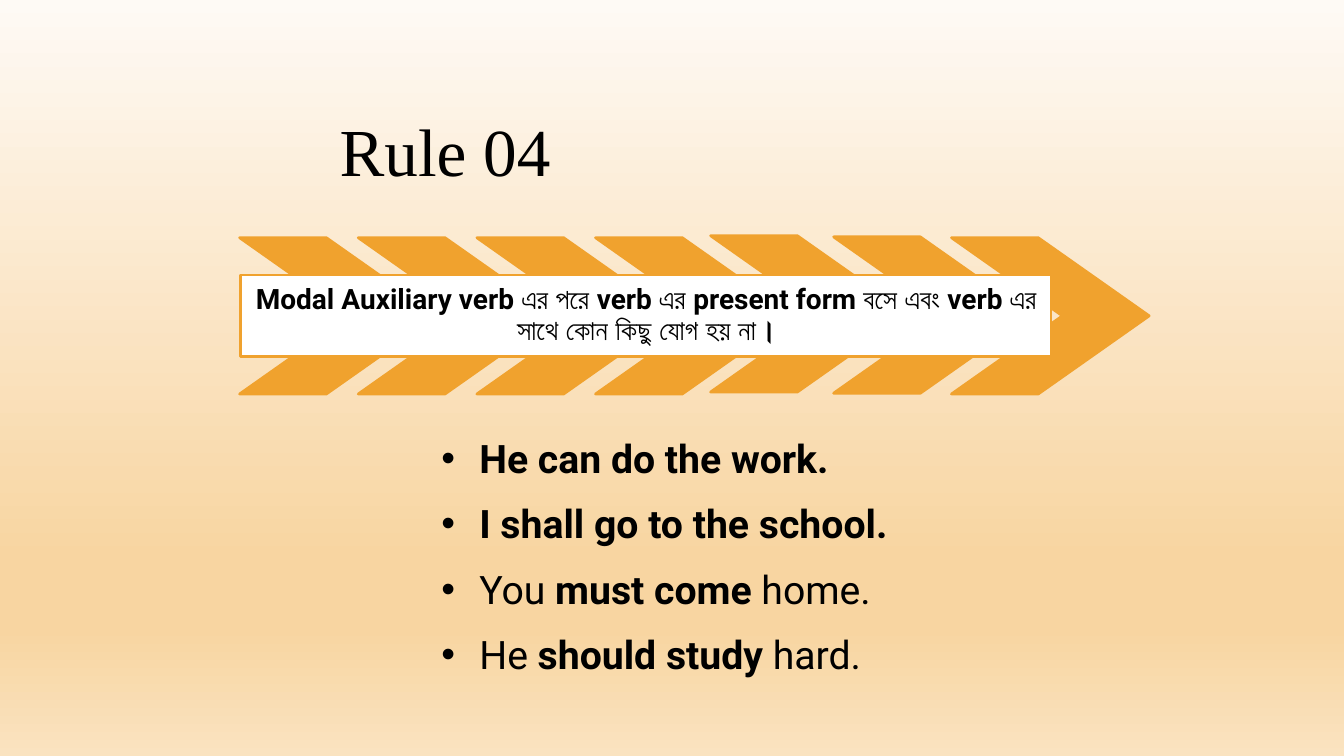
from dataclasses import dataclass

from lxml.etree import SubElement
from pptx import Presentation
from pptx.dml.color import RGBColor
from pptx.enum.shapes import MSO_SHAPE as Preset
from pptx.enum.text import MSO_ANCHOR as Anchor, MSO_AUTO_SIZE as AutoSize, PP_ALIGN as Align
from pptx.oxml.ns import qn
from pptx.shapes.autoshape import Shape
from pptx.slide import Slide
from pptx.text.text import TextFrame, _Paragraph as Paragraph
from pptx.util import Cm, Pt


@dataclass(frozen=True)
class Theme:
    accent: str = "F0A22E"
    paper: str = "FFFFFF"
    ink: str = "000000"
    sky: tuple[tuple[int, str], ...] = (
        (0, "FEFAF5"), (74, "F8D5A1"), (83, "F8D5A1"), (100, "FAE3C0"))
    title_font: str = "Times New Roman"
    body_font: str = "Roboto"
    title_size: int = 48
    rule_size: int = 20
    example_size: int = 28
    outline: int = 2


@dataclass(frozen=True)
class Area:
    """A rectangle on the page, in centimetres."""
    left: float
    top: float
    width: float
    height: float


@dataclass(frozen=True)
class Span:
    text: str
    bold: bool = False


THEME = Theme()
TITLE_AREA = Area(8.05, 3.4, 21.23, 1.93)
RULE_AREA = Area(6.07, 6.93, 20.42, 2.06)
EXAMPLE_AREA = Area(10.87, 10.64, 14.58, 8.41)

CHEVRON_COUNT = 7
CHEVRON_STEP = 2.99
FIRST_CHEVRON = Area(6.04, 5.99, 4.98, 3.94)
CHEVRON_NUDGES = {4: (-0.09, -0.05), 5: (0.02, -0.02)}

RULE = "Modal Auxiliary verb এর পরে verb এর present form বসে এবং verb এর সাথে কোন কিছু যোগ হয় না।"
EXAMPLES = (
    (Span("He can do the work.", True),),
    (Span("I shall go to the school.", True),),
    (Span("You "), Span("must come ", True), Span("home.")),
    (Span("He "), Span("should study ", True), Span("hard.")),
)


def paint_background(page: Slide) -> None:
    """Fill the page with the theme's gradient, running from top to bottom."""
    fill = page.background.fill
    fill.gradient()
    gradient = page.background._cSld.find(".//" + qn("a:gradFill"))
    stops = gradient.find(qn("a:gsLst"))
    for stop in list(stops):
        stops.remove(stop)
    for percent, color in THEME.sky:
        stop = SubElement(stops, qn("a:gs"), pos=str(percent * 1000))
        SubElement(stop, qn("a:srgbClr"), val=color)
    fill.gradient_angle = 270


def place(shape: Shape, area: Area) -> None:
    shape.left, shape.top = Cm(area.left), Cm(area.top)
    shape.width, shape.height = Cm(area.width), Cm(area.height)


def set_frame(frame: TextFrame, *, anchor: Anchor, inset: tuple[float, float],
              auto_size: AutoSize = AutoSize.NONE) -> None:
    """Set wrapping, anchor and the (horizontal, vertical) insets in centimetres."""
    frame.word_wrap = True
    frame.auto_size = auto_size
    frame.vertical_anchor = anchor
    frame.margin_left = frame.margin_right = Cm(inset[0])
    frame.margin_top = frame.margin_bottom = Cm(inset[1])


def write(para: Paragraph, text: str, *, font: str, size: int, bold: bool = False,
          align: Align = Align.LEFT, spacing: float = 0.9) -> None:
    para.alignment = align
    para.line_spacing = spacing
    para.space_before = Pt(0)
    span = para.add_run()
    span.text = text
    span.font.name = font
    span.font.size = Pt(size)
    span.font.bold = bold
    span.font.color.rgb = RGBColor.from_string(THEME.ink)


def add_outlined(page: Slide, preset: Preset, area: Area, fill: str) -> Shape:
    shape = page.shapes.add_shape(
        preset, Cm(area.left), Cm(area.top), Cm(area.width), Cm(area.height))
    shape.shadow.inherit = False
    shape.fill.solid()
    shape.fill.fore_color.rgb = RGBColor.from_string(fill)
    shape.line.color.rgb = RGBColor.from_string(THEME.accent)
    shape.line.width = Pt(THEME.outline)
    return shape


def add_title(page: Slide) -> None:
    title = page.shapes.title
    place(title, TITLE_AREA)
    set_frame(title.text_frame, anchor=Anchor.BOTTOM, inset=(0.51, 0.51))
    write(title.text_frame.paragraphs[0], "Rule 04",
          font=THEME.title_font, size=THEME.title_size)


def add_chevrons(page: Slide) -> None:
    first = FIRST_CHEVRON
    for index in range(CHEVRON_COUNT):
        across, down = CHEVRON_NUDGES.get(index, (0, 0))
        area = Area(first.left + index * CHEVRON_STEP + across, first.top + down,
                    first.width, first.height)
        chevron = add_outlined(page, Preset.CHEVRON, area, THEME.accent)
        chevron.adjustments[0] = 0.71


def add_rule(page: Slide) -> None:
    banner = add_outlined(page, Preset.RECTANGLE, RULE_AREA, THEME.paper)
    set_frame(banner.text_frame, anchor=Anchor.MIDDLE, inset=(0.15, 0.15))
    write(banner.text_frame.paragraphs[0], RULE, font=THEME.body_font,
          size=THEME.rule_size, bold=True, align=Align.CENTER)


def add_examples(page: Slide) -> None:
    body = page.placeholders[1]
    place(body, EXAMPLE_AREA)
    frame = body.text_frame
    set_frame(frame, anchor=Anchor.TOP, inset=(0.25, 0.13),
              auto_size=AutoSize.SHAPE_TO_FIT_TEXT)
    for index, spans in enumerate(EXAMPLES):
        para = frame.add_paragraph() if index else frame.paragraphs[0]
        properties = para._p.get_or_add_pPr()
        properties.set("marL", str(Cm(0.96)))
        properties.set("indent", str(-Cm(0.96)))
        para.space_after = Pt(8)
        for span in spans:
            write(para, span.text, font=THEME.body_font, size=THEME.example_size,
                  bold=span.bold, spacing=1.15)


def main() -> None:
    deck = Presentation()
    deck.slide_width, deck.slide_height = Cm(33.87), Cm(19.05)
    page = deck.slides.add_slide(deck.slide_layouts[1])
    paint_background(page)
    add_title(page)
    add_chevrons(page)
    add_rule(page)
    add_examples(page)
    deck.save("out.pptx")


if __name__ == "__main__":
    main()
